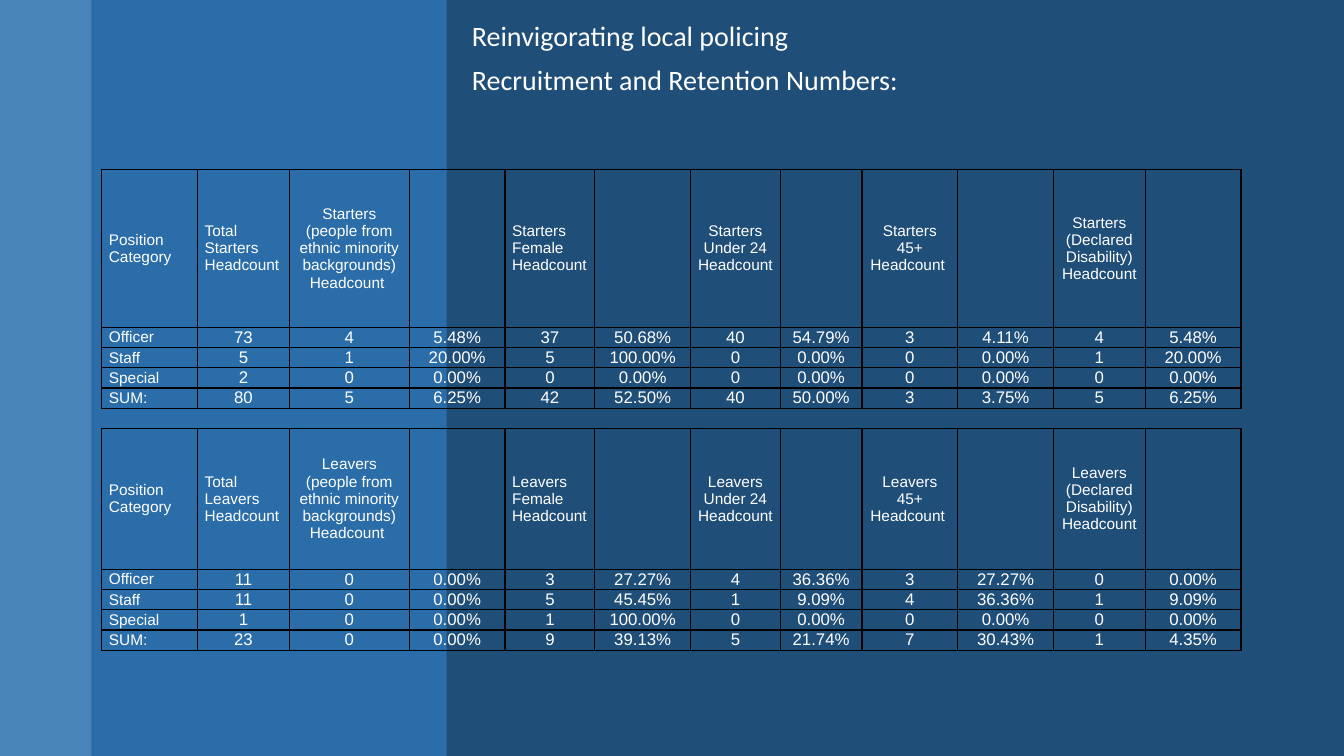
from dataclasses import dataclass
from lxml.etree import SubElement
from pptx import Presentation
from pptx.dml.color import RGBColor
from pptx.enum.shapes import MSO_SHAPE
from pptx.enum.text import MSO_ANCHOR, MSO_AUTO_SIZE, PP_ALIGN
from pptx.oxml.ns import qn
from pptx.util import Inches, Pt

HEADING = ("Reinvigorating local policing", "Recruitment and Retention Numbers:")
HEADERS = (
    "Position Category", "Total {} Headcount",
    "{} (people from ethnic minority backgrounds) Headcount ", "",
    "{} Female Headcount", "", "{} Under 24 Headcount ", "",
    "{} 45+ Headcount ", "", "{} (Declared Disability) Headcount ", "",
)
LEFT_HEADERS = (0, 1, 4)
COUNTS = {
    "Starters": {
        "Officer": (73, 4, 37, 40, 3, 4),
        "Staff": (5, 1, 5, 0, 0, 1),
        "Special": (2, 0, 0, 0, 0, 0),
    },
    "Leavers": {
        "Officer": (11, 0, 3, 4, 3, 0),
        "Staff": (11, 0, 5, 1, 4, 1),
        "Special": (1, 0, 1, 0, 0, 0),
    },
}
COL_WIDTHS = (0.95, 0.91, 1.19, 0.95, 0.89, 0.95, 0.89, 0.81, 0.95, 0.95, 0.91, 0.95)
HEADER_HEIGHTS = {"Starters": 1.57, "Leavers": 1.4}
ROW_HEIGHT = 0.2
TABLE_AT = (1.01, 1.68)
BODY_AT = (4.58, 0.17, 7.6, 6.27)
SLIDE = (13.33, 7.5)
NO_STYLE = "{2D5ABB26-0587-4C30-8999-92F81FD0307C}"


@dataclass(frozen=True)
class Theme:
    background: str = "1F4E79"
    text: str = "FFFFFF"
    border: str = "000000"
    bands: tuple = ((0, 0.91, "5B9BD5", 70), (0.91, 3.52, "2E75B6", 80))
    heading_font: str = "Calibri"
    table_font: str = "Arial"
    heading_size: int = 20
    label_size: int = 11
    value_size: int = 12


THEME = Theme()


def add_run(p, text, font, size):
    r = p.add_run()
    r.text = text
    r.font.name = font
    r.font.size = Pt(size)
    r.font.color.rgb = RGBColor.from_string(THEME.text)


def add_band(s, left, width, color, alpha):
    sp = s.shapes.add_shape(MSO_SHAPE.RECTANGLE, Inches(left), 0, Inches(width), Inches(SLIDE[1]))
    sp.shadow.inherit = False
    sp.fill.solid()
    sp.fill.fore_color.rgb = RGBColor.from_string(color)
    sp.line.fill.background()
    clr = sp.fill._xPr.find(qn("a:solidFill"))[0]
    SubElement(clr, qn("a:alpha"), val=str(alpha * 1000))


def add_heading(s):
    title, body = s.shapes.title, s.placeholders[1]
    tree = s.shapes._spTree
    tree.remove(title._element)
    tree.append(body._element)
    body.left, body.top, body.width, body.height = map(Inches, BODY_AT)
    tf = body.text_frame
    tf.word_wrap = True
    tf.auto_size = MSO_AUTO_SIZE.NONE
    tf.vertical_anchor = MSO_ANCHOR.TOP
    for i, line in enumerate(HEADING):
        p = tf.add_paragraph() if i else tf.paragraphs[0]
        p.line_spacing = 0.9
        p.space_before = Pt(10)
        pPr = p._p.get_or_add_pPr()
        pPr.set("marL", "0")
        pPr.set("indent", "0")
        SubElement(pPr, qn("a:buNone"))
        add_run(p, line, THEME.heading_font, THEME.heading_size)


def value_row(label, counts):
    total, *groups = counts
    row = [label, str(total)]
    for n in groups:
        row += [str(n), f"{n / total:.2%}"]
    return row


def table_rows():
    rows = []
    for group, staff in COUNTS.items():
        if rows:
            rows.append(("gap", ROW_HEIGHT, [""] * len(HEADERS)))
        rows.append(("header", HEADER_HEIGHTS[group], [h.format(group) for h in HEADERS]))
        sums = [sum(column) for column in zip(*staff.values())]
        for label, counts in (staff | {"SUM:": sums}).items():
            rows.append(("values", ROW_HEIGHT, value_row(label, counts)))
    return rows


def set_borders(cell, sides):
    tcPr = cell._tc.get_or_add_tcPr()
    for side in sides:
        ln = SubElement(tcPr, qn("a:ln" + side), w=str(Pt(1)))
        fill = SubElement(ln, qn("a:solidFill"))
        SubElement(fill, qn("a:srgbClr"), val=THEME.border)


def fill_cell(cell, kind, col, text):
    set_borders(cell, "TB" if kind == "gap" else "LRTB")
    cell.fill.background()
    cell.vertical_anchor = MSO_ANCHOR.MIDDLE
    cell.margin_left = cell.margin_right = Inches(0.07)
    cell.margin_top = cell.margin_bottom = 0
    p = cell.text_frame.paragraphs[0]
    if not text:
        SubElement(p._p, qn("a:endParaRPr"), sz=str(THEME.label_size * 100))
        return
    left = col in LEFT_HEADERS if kind == "header" else col == 0
    p.alignment = PP_ALIGN.LEFT if left else PP_ALIGN.CENTER
    size = THEME.label_size if kind == "header" or col == 0 else THEME.value_size
    add_run(p, text, THEME.table_font, size)


def add_headcounts(s):
    rows = table_rows()
    size = (sum(COL_WIDTHS), sum(height for _, height, _ in rows))
    frame = s.shapes.add_table(len(rows), len(HEADERS), *map(Inches, TABLE_AT + size))
    table = frame.table
    table.first_row = table.horz_banding = False
    table._tbl.tblPr.find(qn("a:tableStyleId")).text = NO_STYLE
    for column, width in zip(table.columns, COL_WIDTHS):
        column.width = Inches(width)
    for i, (kind, height, texts) in enumerate(rows):
        table.rows[i].height = Inches(height)
        for j, text in enumerate(texts):
            fill_cell(table.cell(i, j), kind, j, text)


def main():
    prs = Presentation()
    prs.slide_width, prs.slide_height = map(Inches, SLIDE)
    s = prs.slides.add_slide(prs.slide_layouts[1])
    s.background.fill.solid()
    s.background.fill.fore_color.rgb = RGBColor.from_string(THEME.background)
    for band in THEME.bands:
        add_band(s, *band)
    add_heading(s)
    add_headcounts(s)
    prs.save("out.pptx")


if __name__ == "__main__":
    main()
